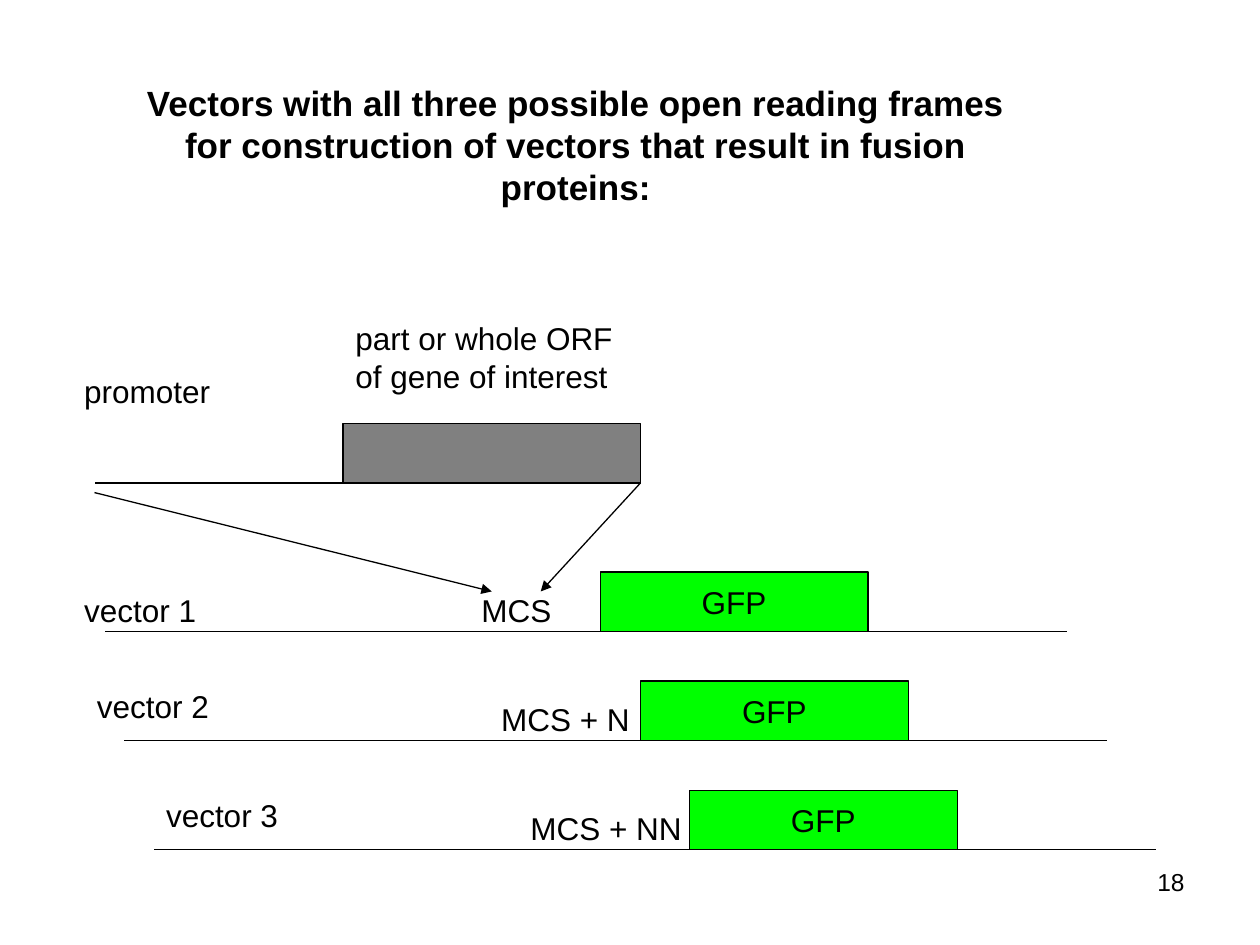
from lxml.etree import SubElement
from pptx import Presentation
from pptx.dml.color import RGBColor
from pptx.enum.shapes import MSO_CONNECTOR as Connector, MSO_SHAPE as Shape
from pptx.enum.text import MSO_ANCHOR as Anchor, MSO_AUTO_SIZE as AutoSize, PP_ALIGN as Align
from pptx.oxml.ns import qn
from pptx.util import Pt

COLOURS = {"ink": "000000", "gene": "808080", "gfp": "00FF00"}
FONT = "Arial"
LINE_WIDTH = 0.75


def colour(name):
    return RGBColor.from_string(COLOURS[name])


def write_text(frame, text, size=18, bold=False, align=Align.LEFT, anchor=Anchor.TOP, wrap=False):
    frame.word_wrap = wrap
    frame.auto_size = AutoSize.NONE
    frame.vertical_anchor = anchor
    frame.text = text
    for paragraph in frame.paragraphs:
        paragraph.alignment = align
        font = paragraph.font
        font.name, font.size, font.bold = FONT, Pt(size), bold
        font.color.rgb = colour("ink")


class SlideBuilder:
    def __init__(self, slide):
        self.slide = slide

    def title(self, text, left, top, width, height, **text_format):
        title = self.slide.shapes.title
        title.left, title.top, title.width, title.height = map(Pt, (left, top, width, height))
        write_text(title.text_frame, text, **text_format)

    def label(self, text, left, top, width, height=29, **text_format):
        box = self.slide.shapes.add_textbox(*map(Pt, (left, top, width, height)))
        write_text(box.text_frame, text, **text_format)

    def box(self, fill, left, top, width, height, text=""):
        shape = self.slide.shapes.add_shape(Shape.RECTANGLE, *map(Pt, (left, top, width, height)))
        shape.shadow.inherit = False
        shape.fill.solid()
        shape.fill.fore_color.rgb = colour(fill)
        shape.line.color.rgb = colour("ink")
        shape.line.width = Pt(LINE_WIDTH)
        if text:
            write_text(shape.text_frame, text, align=Align.CENTER, anchor=Anchor.MIDDLE)

    def line(self, x1, y1, x2, y2, arrow=False):
        connector = self.slide.shapes.add_connector(Connector.STRAIGHT, *map(Pt, (x1, y1, x2, y2)))
        connector.line.color.rgb = colour("ink")
        connector.line.width = Pt(LINE_WIDTH)
        if arrow:
            SubElement(connector.line._get_or_add_ln(), qn("a:tailEnd"), type="triangle")
        SubElement(connector._element.spPr, qn("a:effectLst"))


def draw_insert(builder):
    """Draw the promoter and gene that go into the cloning site."""
    left, gene_left, gene_right, baseline = 54, 196, 366, 276
    builder.box("gene", gene_left, baseline - 34, gene_right - gene_left, 34)
    builder.line(gene_left, baseline, left, baseline)
    builder.label("promoter", 41, 209, 86.5)
    builder.label("part or whole ORF\nof gene of interest", gene_left, 179, 161, 50.5)
    builder.line(left, 281.5, 281, 338, arrow=True)
    builder.line(gene_right, baseline, 309, 338, arrow=True)


def draw_vectors(builder):
    gfp_width, gfp_height = 153, 34
    first_baseline, pitch = 360.8, 62.4
    # name left, name rise above baseline, site, site left, site width, line left, GFP left
    vectors = [
        (41, 26.7, "MCS", 268, 54.5, 59.8, 343),
        (48.3, 34.2, "MCS + N", 279.3, 88, 70.8, 366),
        (87.8, 34.2, "MCS + NN", 296, 101, 87.8, 394),
    ]
    for index, (name_left, rise, site, site_left, site_width, line_left, gfp_left) in enumerate(vectors):
        baseline = first_baseline + index * pitch
        gfp_right = gfp_left + gfp_width
        builder.box("gfp", gfp_left, baseline - gfp_height, gfp_width, gfp_height, "GFP")
        builder.line(line_left + 317.5, baseline, line_left, baseline)
        builder.line(gfp_right, baseline, gfp_right + 113.5, baseline)
        builder.label(f"vector {index + 1}", name_left, baseline - rise, 78.5)
        builder.label(site, site_left, baseline - 26.7, site_width)


def main():
    presentation = Presentation()
    presentation.slide_width, presentation.slide_height = Pt(720), Pt(540)
    title_only = presentation.slide_layouts[5]
    builder = SlideBuilder(presentation.slides.add_slide(title_only))
    builder.title(
        "Vectors with all three possible open reading frames for construction of vectors "
        "that result in fusion proteins:",
        65.5, 43.2, 527, 80, size=20, bold=True, align=Align.CENTER, wrap=True,
    )
    draw_insert(builder)
    draw_vectors(builder)
    builder.label("18", 516, 492, 168, 37.5, size=14, align=Align.RIGHT, wrap=True)
    presentation.save("out.pptx")


if __name__ == "__main__":
    main()
